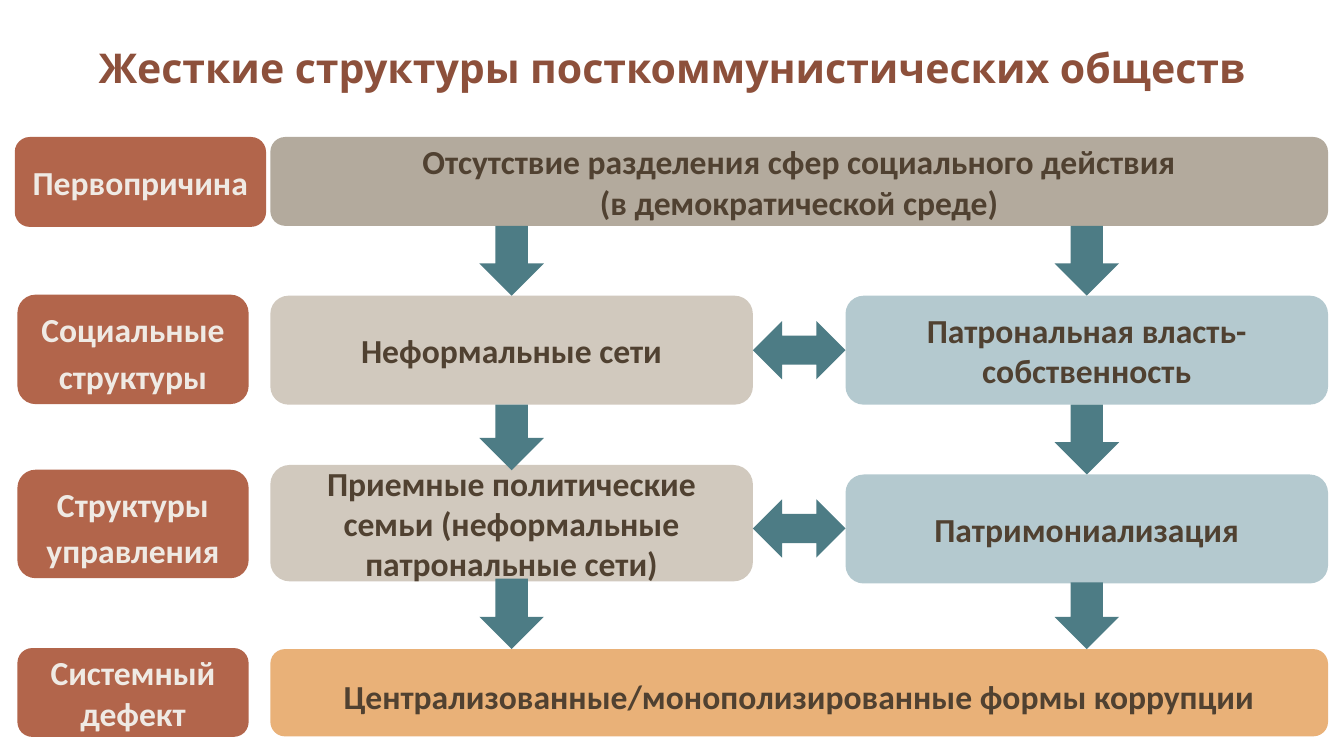
from lxml import etree
from pptx import Presentation
from pptx import util as u
from pptx.dml.color import RGBColor
from pptx.enum import shapes, text
from pptx.oxml.ns import qn

HUES = {
    "title": "8D503B", "ink": "504131", "pale": "EFEAE4", "label": "B2654B",
    "cause": "B3AA9D", "net": "D1C9BE", "power": "6B95A1",
    "flaw": "E9B178", "arrow": "4D7C85",
}
KIND = shapes.MSO_SHAPE
COL = 9.12   # width of a column
HEAD = 1.22  # breadth of a down arrow


def rgb(name):
    return RGBColor.from_string(HUES[name])


def style(par, size, face, hue):
    par.alignment = text.PP_ALIGN.CENTER
    form = {"size": u.Pt(size), "name": face, "bold": True}
    for key, val in form.items():
        setattr(par.font, key, val)
    par.font.color.rgb = rgb(hue)


def plain(slide, kind, box, fill):
    """Add a flat shape with no line; box is left, top, width, height in cm."""
    shape = slide.shapes.add_shape(kind, *(u.Cm(n) for n in box))
    shape.shadow.inherit = False
    shape.fill.solid()
    shape.fill.fore_color.rgb = rgb(fill)
    shape.line.fill.background()
    return shape


def card(slide, box, words, fill, ink="ink", gap=None, alpha=None):
    shape = plain(slide, KIND.ROUNDED_RECTANGLE, box, fill)
    if alpha:
        tone = shape.fill._xPr.find(".//" + qn("a:srgbClr"))
        etree.SubElement(tone, qn("a:alpha"), val=str(alpha * 1000))
    frame = shape.text_frame
    frame.word_wrap = True
    frame.vertical_anchor = text.MSO_ANCHOR.MIDDLE
    frame.text = words
    for par in frame.paragraphs:
        style(par, 18, "Calibri", ink)
        if gap:
            par.line_spacing = gap
    return shape


def title(slide, box, words):
    head = slide.shapes.title
    for key, val in zip(("left", "top", "width", "height"), box):
        setattr(head, key, u.Cm(val))
    head.text_frame.text = words
    head.text_frame.vertical_anchor = text.MSO_ANCHOR.MIDDLE
    style(head.text_frame.paragraphs[0], 22, "Open Sans", "title")


def labels(slide, left, rows):
    for inset, top, wide, high, words, gap in rows:
        card(slide, (left + inset, top, wide, high), words, "label", "pale", gap)


def column(slide, left, fill, cards, drops, alpha=None):
    """Stack the cards and centre the down arrows on the column."""
    for top, high, words in cards:
        card(slide, (left, top, COL, high), words, fill, alpha=alpha)
    for top, end in drops:
        box = (left + (COL - HEAD) / 2, top, HEAD, end - top)
        plain(slide, KIND.DOWN_ARROW, box, "arrow")


def scheme(slide, box):
    """Place cause, two linked columns and resulting flaw within the box."""
    left, top, wide, high = box
    end = top + high
    right = left + wide - COL
    card(slide, (left, top, wide, 1.68),
         "Отсутствие разделения сфер социального действия\n"
         "(в демократической среде)", "cause")
    flaw = card(slide, (left, end - 1.65, wide, 1.65),
                "Централизованные/монополизированные формы коррупции",
                "flaw", gap=1.15)
    pads = {"margin_left": 0.15, "margin_right": 0.15,
            "margin_top": 0.03, "margin_bottom": 0.03}
    for key, val in pads.items():
        setattr(flaw.text_frame, key, u.Cm(val))

    column(slide, left, "net", [
        (top + 3, 2.06, "Неформальные сети"),
        (top + 6.2, 2.2, "Приемные политические семьи "
                         "(неформальные патрональные сети)"),
    ], [(top + 1.68, top + 3), (top + 5.06, top + 6.3), (top + 8.35, end - 1.65)])
    column(slide, right, "power", [
        (top + 3, 2.06, "Патрональная власть-собственность"),
        (top + 6.38, 2.06, "Патримониализация"),
    ], [(top + 1.68, top + 3), (top + 5.06, top + 6.38), (top + 8.42, end - 1.65)],
        alpha=50)

    for mid in (top + 4.03, top + 7.4):
        span = (left + COL, mid - 0.55, right - left - COL, 1.1)
        plain(slide, KIND.LEFT_RIGHT_ARROW, span, "arrow")


def main():
    deck = Presentation()
    deck.slide_width, deck.slide_height = u.Cm(25.4), u.Cm(14.29)
    slide = deck.slides.add_slide(deck.slide_layouts[5])
    title(slide, (0.3, 0, 24.8, 2.54),
          "Жесткие структуры посткоммунистических обществ")
    scheme(slide, (5.11, 2.59, 19.99, 11.33))
    labels(slide, 0.28, [
        (0, 2.59, 4.75, 1.7, "Первопричина", None),
        (0.05, 5.57, 4.37, 2.07, "Социальные структуры", 1.15),
        (0.05, 8.88, 4.37, 2.05, "Структуры управления", 1.15),
        (0.05, 12.25, 4.37, 1.68, "Системный дефект", None),
    ])
    deck.save("out.pptx")


if __name__ == "__main__":
    main()
